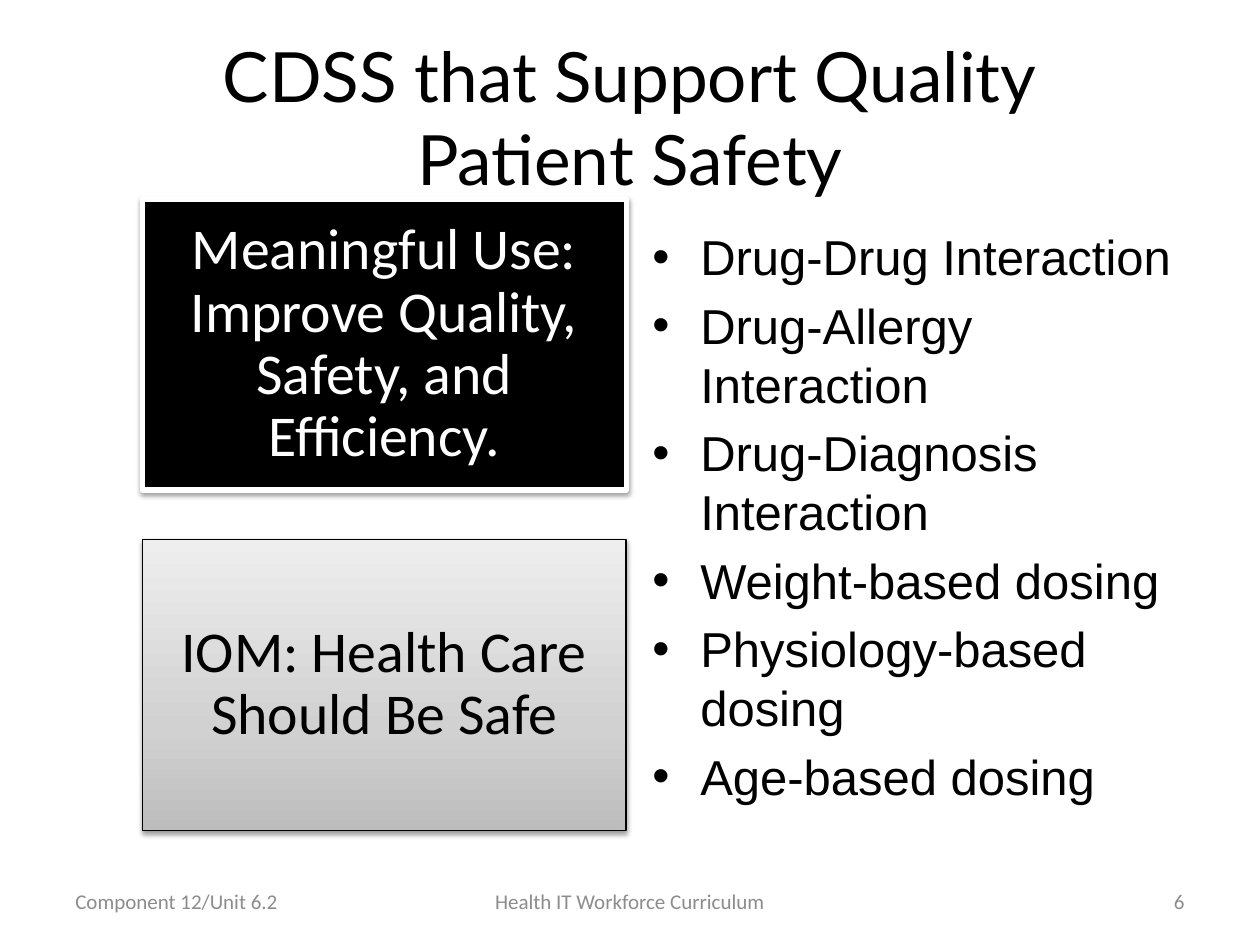
from copy import deepcopy

from lxml import etree
from pptx import Presentation
from pptx.dml.color import RGBColor
from pptx.enum.shapes import MSO_SHAPE
from pptx.enum.text import MSO_ANCHOR, PP_ALIGN
from pptx.oxml.ns import qn
from pptx.util import Inches, Pt

RECTANGLE = MSO_SHAPE.RECTANGLE
LEFT, CENTER, RIGHT = PP_ALIGN.LEFT, PP_ALIGN.CENTER, PP_ALIGN.RIGHT
TOP, MIDDLE = MSO_ANCHOR.TOP, MSO_ANCHOR.MIDDLE

BLACK, WHITE, GRAY = "000000", "FFFFFF", "8C8C8C"
GRADIENT = [(0, "BDBDBD"), (0.35, "D1D1D1"), (1, "EEEEEE")]

TITLE = "CDSS that Support Quality\vPatient Safety"
ALERTS = [
    "Drug-Drug Interaction",
    "Drug-Allergy Interaction",
    "Drug-Diagnosis Interaction",
    "Weight-based dosing",
    "Physiology-based dosing",
    "Age-based dosing",
]
GOALS = [
    "Meaningful Use: Improve Quality, Safety, and Efficiency.",
    "IOM: Health Care Should Be Safe",
]


def color(hex_string):
    return RGBColor.from_string(hex_string)


def write(frame, text, first=True, font="Calibri", size=12, fill=BLACK,
          align=LEFT, line_spacing=None, before=None):
    """Write one paragraph into a text frame and return it."""
    paragraph = frame.paragraphs[0] if first else frame.add_paragraph()
    paragraph.text = text
    paragraph.alignment = align
    paragraph.line_spacing = line_spacing
    paragraph.space_before = before
    for run in paragraph.runs:
        run.font.name = font
        run.font.size = Pt(size)
        run.font.color.rgb = color(fill)
    return paragraph


def add_frame(slide, box, anchor=MIDDLE):
    frame = slide.shapes.add_textbox(*map(Inches, box)).text_frame
    frame.word_wrap = True
    frame.vertical_anchor = anchor
    return frame


def add_bullet(paragraph, indent=0.38):
    properties = paragraph._p.get_or_add_pPr()
    properties.set("marL", str(Inches(indent)))
    properties.set("indent", str(-Inches(indent)))
    etree.SubElement(properties, qn("a:buFont"), typeface="Arial")
    etree.SubElement(properties, qn("a:buChar"), char="•")


def add_shadow(shape):
    shape.shadow.inherit = False
    effects = shape._element.spPr.find(qn("a:effectLst"))
    shadow = etree.SubElement(
        effects, qn("a:outerShdw"), blurRad=str(Pt(3.1)), dist=str(Pt(1.6)),
        dir="5400000", rotWithShape="0")
    shade = etree.SubElement(shadow, qn("a:srgbClr"), val=BLACK)
    etree.SubElement(shade, qn("a:alpha"), val="38000")


def fill_gradient(shape):
    shape.fill.gradient()
    shape.fill.gradient_angle = 90
    stop_list = shape._element.spPr.find(".//" + qn("a:gsLst"))
    stop_list.append(deepcopy(stop_list[-1]))
    for stop, (position, shade) in zip(shape.fill.gradient_stops, GRADIENT):
        stop.position = position
        stop.color.rgb = color(shade)


def add_goal(slide, box, text, dark):
    shape = slide.shapes.add_shape(RECTANGLE, *map(Inches, box))
    if dark:
        shape.fill.solid()
        shape.fill.fore_color.rgb = color(BLACK)
    else:
        fill_gradient(shape)
    shape.line.color.rgb = color(WHITE if dark else BLACK)
    shape.line.width = Pt(3 if dark else 0.75)
    add_shadow(shape)
    frame = shape.text_frame
    frame.word_wrap = True
    frame.vertical_anchor = MIDDLE
    frame.margin_left = frame.margin_right = Inches(0.14)
    frame.margin_top = frame.margin_bottom = Inches(0.14)
    write(frame, text, size=33, fill=WHITE if dark else BLACK,
          align=CENTER, line_spacing=0.9)


def add_goals(slide, box, gap=0.39):
    left, top, width, height = box
    goal_height = (height - gap * (len(GOALS) - 1)) / len(GOALS)
    for index, text in enumerate(GOALS):
        goal_top = top + index * (goal_height + gap)
        add_goal(slide, (left, goal_top, width, goal_height), text, index == 0)


def add_title(slide, box):
    write(add_frame(slide, box), TITLE, font="Lato", size=39.6, align=CENTER)


def add_alerts(slide, box):
    frame = add_frame(slide, box, TOP)
    for index, text in enumerate(ALERTS):
        add_bullet(write(frame, text, first=index == 0, font="Arial", size=28,
                         before=Pt(5.6)))


def add_footer(slide, box):
    left, top, width, height = box
    side, middle = 2.33, 3.17
    parts = [
        ("Component 12/Unit 6.2", left, side, LEFT),
        ("Health IT Workforce Curriculum", left + (width - middle) / 2, middle, CENTER),
        ("6", left + width - side, side, RIGHT),
    ]
    for text, part_left, part_width, align in parts:
        frame = add_frame(slide, (part_left, top, part_width, height))
        write(frame, text, fill=GRAY, align=align)


def main():
    presentation = Presentation()
    presentation.slide_width = Inches(10)
    presentation.slide_height = Inches(7.5)
    slide = presentation.slides.add_slide(presentation.slide_layouts[6])

    # Heading, then goals on the left and alerts on the right
    add_title(slide, (0.5, 0.3, 9, 1.25))
    add_alerts(slide, (5.08, 1.75, 4.42, 4.95))
    add_goals(slide, (1.13, 1.58, 3.84, 5.01))

    # Footer line
    add_footer(slide, (0.5, 6.95, 9, 0.4))
    presentation.save("out.pptx")


if __name__ == "__main__":
    main()
